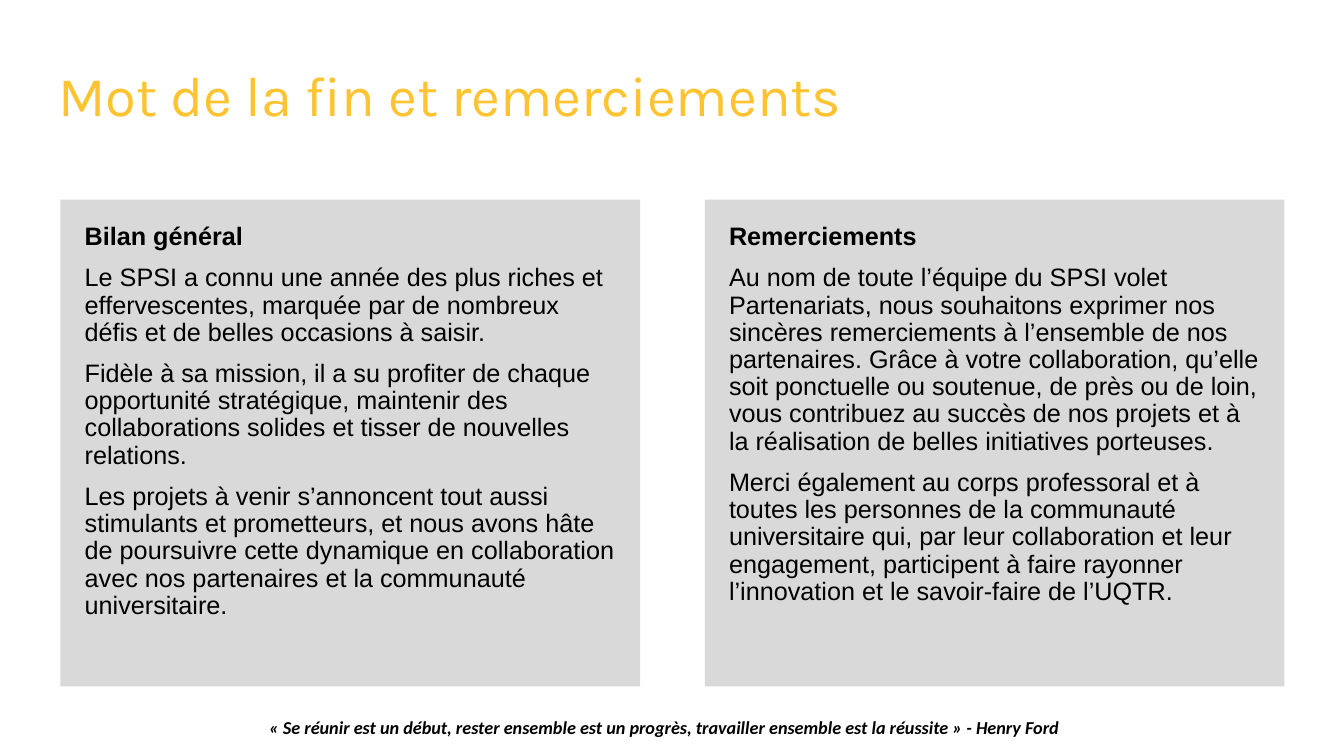
from pptx import Presentation
from pptx.dml.color import RGBColor
from pptx.enum.text import MSO_ANCHOR, MSO_AUTO_SIZE, PP_ALIGN
from pptx.oxml.ns import qn
from pptx.util import Inches, Pt


def color(code):
    """Turn a hex string into a colour."""
    return RGBColor.from_string(code)


def write(para, text, font="Arial", size=18, ink="000000", bold=False,
          italic=False, line=0.9, before=0):
    """Write a formatted, unbulleted paragraph aligned left."""
    props = para._p.get_or_add_pPr()
    props.set("marL", "0")
    props.set("indent", "0")
    props.append(props.makeelement(qn("a:buNone"), {}))
    para.alignment = PP_ALIGN.LEFT
    para.line_spacing = line
    para.space_before = Pt(before)
    run = para.add_run()
    run.text = text
    face = run.font
    face.name, face.size = font, Pt(size)
    face.bold, face.italic = bold, italic
    face.color.rgb = color(ink)


class Page:
    """Hold the style and the current slide."""

    gold, gray = "FDC330", "D9D9D9"

    def __init__(self, deck):
        """Add a slide with a title and two bodies."""
        self.slide = deck.slides.add_slide(deck.slide_layouts[3])

    def place(self, shape, left, top, width, height):
        """Set the bounds of a shape and return its text frame."""
        shape.left, shape.top = Inches(left), Inches(top)
        shape.width, shape.height = Inches(width), Inches(height)
        frame = shape.text_frame
        frame.word_wrap = True
        frame.auto_size = MSO_AUTO_SIZE.NONE
        return frame

    def title(self, text, *box):
        """Fill the title."""
        frame = self.place(self.slide.shapes.title, *box)
        frame.vertical_anchor = MSO_ANCHOR.MIDDLE
        write(frame.paragraphs[0], text, font="Karla", size=40, ink=self.gold)

    def panel(self, index, head, texts, *box):
        """Fill a body with a bold heading and its paragraphs."""
        shape = self.slide.placeholders[index]
        shape.fill.solid()
        shape.fill.fore_color.rgb = color(self.gray)
        frame = self.place(shape, *box)
        frame.vertical_anchor = MSO_ANCHOR.TOP
        frame.margin_left = frame.margin_right = Inches(0.24)
        frame.margin_top = frame.margin_bottom = Inches(0.24)
        write(frame.paragraphs[0], head, bold=True)
        for text in texts:
            write(frame.add_paragraph(), text, before=10)

    def quote(self, text, *box):
        """Add a closing quote."""
        shape = self.slide.shapes.add_textbox(0, 0, 0, 0)
        frame = self.place(shape, *box)
        frame.auto_size = MSO_AUTO_SIZE.SHAPE_TO_FIT_TEXT
        write(frame.paragraphs[0], text, font="Calibri", size=13,
              bold=True, italic=True, line=1.0)


def main():
    """Build and save the slide."""
    deck = Presentation()
    deck.slide_width, deck.slide_height = Inches(13.33), Inches(7.5)
    page = Page(deck)
    page.title("Mot de la fin et remerciements", 0.48, 0.31, 12.38, 1.33)
    panels = [
        ("Bilan général", [
            "Le SPSI a connu une année des plus riches et effervescentes, "
            "marquée par de nombreux défis et de belles occasions à saisir.",
            "Fidèle à sa mission, il a su profiter de chaque opportunité "
            "stratégique, maintenir des collaborations solides et tisser de "
            "nouvelles relations.",
            "Les projets à venir s’annoncent tout aussi stimulants et "
            "prometteurs, et nous avons hâte de poursuivre cette dynamique "
            "en collaboration avec nos partenaires et la communauté "
            "universitaire.",
        ]),
        ("Remerciements", [
            "Au nom de toute l’équipe du SPSI volet Partenariats, nous "
            "souhaitons exprimer nos sincères remerciements à l’ensemble de "
            "nos partenaires. Grâce à votre collaboration, qu’elle soit "
            "ponctuelle ou soutenue, de près ou de loin, vous contribuez au "
            "succès de nos projets et à la réalisation de belles initiatives "
            "porteuses.",
            "Merci également au corps professoral et à toutes les personnes "
            "de la communauté universitaire qui, par leur collaboration et "
            "leur engagement, participent à faire rayonner l’innovation et "
            "le savoir-faire de l’UQTR.",
        ]),
    ]
    for i, (head, texts) in enumerate(panels):
        page.panel(i + 1, head, texts, 0.6 + 6.39 * i, 1.98, 5.75, 4.83)
    page.quote("« Se réunir est un début, rester ensemble est un progrès, "
               "travailler ensemble est la réussite » - Henry Ford",
               2.57, 7.06, 8.19, 0.32)
    deck.save("out.pptx")


if __name__ == "__main__":
    main()
